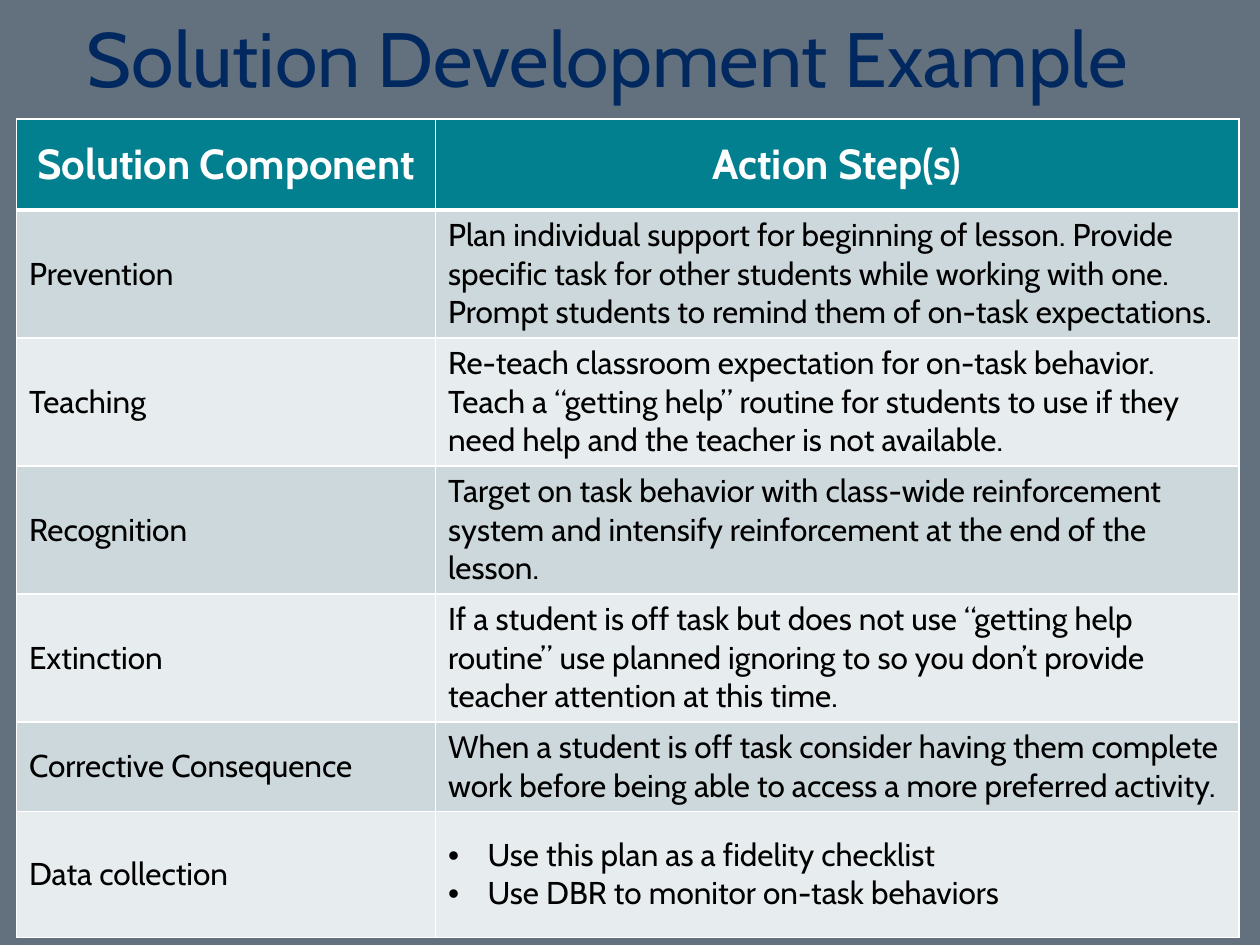
from lxml import etree
from pptx import Presentation
from pptx.dml.color import RGBColor
from pptx.enum.text import MSO_ANCHOR, MSO_AUTO_SIZE, PP_ALIGN
from pptx.oxml.ns import qn
from pptx.util import Pt

MIDDLE, TOP = MSO_ANCHOR.MIDDLE, MSO_ANCHOR.TOP
LEFT, CENTER = PP_ALIGN.LEFT, PP_ALIGN.CENTER
NO_AUTOFIT = MSO_AUTO_SIZE.NONE
FONT = "Cabin"
WHITE = "FFFFFF"
BANDS = ["CCD8DB", "E7EDEE"]
COLUMN_WIDTHS = [239.5, 459]
ROW_HEIGHTS = [52, 69, 69, 69, 69, 48, 72]
ROWS = [
    ("Solution Component", ["Action Step(s)"]),
    ("Prevention", [
        "Plan individual support for beginning of lesson. Provide specific task "
        "for other students while working with one.",
        "Prompt students to remind them of on-task expectations."]),
    ("Teaching", [
        "Re-teach classroom expectation for on-task behavior.",
        "Teach a “getting help” routine for students to use if they need help "
        "and the teacher is not available."]),
    ("Recognition", [
        "Target on task behavior with class-wide reinforcement system and "
        "intensify reinforcement at the end of the lesson."]),
    ("Extinction", [
        "If a student is off task but does not use “getting help routine” use "
        "planned ignoring to so you don’t provide teacher attention at this time."]),
    ("Corrective Consequence", [
        "When a student is off task consider having them complete work before "
        "being able to access a more preferred activity."]),
    ("Data collection", [
        "Use this plan as a fidelity checklist",
        "Use DBR to monitor on-task behaviors"]),
]


def color(value):
    return RGBColor.from_string(value)


def set_borders(cell, bottom_width):
    properties = cell._tc.get_or_add_tcPr()
    for index, side in enumerate(["lnL", "lnR", "lnT", "lnB"]):
        width = bottom_width if side == "lnB" else 1
        line = etree.Element(qn(f"a:{side}"), w=str(Pt(width)))
        fill = etree.SubElement(line, qn("a:solidFill"))
        etree.SubElement(fill, qn("a:srgbClr"), val=WHITE)
        properties.insert(index, line)


presentation = Presentation()
presentation.slide_width = Pt(720)
presentation.slide_height = Pt(540)
slide = presentation.slides.add_slide(presentation.slide_layouts[5])
slide.background.fill.solid()
slide.background.fill.fore_color.rgb = color("63717F")

title = slide.shapes.title
title.left, title.top, title.width, title.height = Pt(42.5), Pt(3), Pt(665), Pt(65)
title.text_frame.text = "Solution Development Example"
title.text_frame.auto_size = NO_AUTOFIT
title.text_frame.vertical_anchor = MIDDLE
paragraph = title.text_frame.paragraphs[0]
paragraph.alignment = LEFT
paragraph.line_spacing = 0.9
paragraph.font.name = FONT
paragraph.font.size = Pt(44)
paragraph.font.color.rgb = color("01295F")

table = slide.shapes.add_table(
    len(ROWS), len(COLUMN_WIDTHS), Pt(9.4), Pt(68),
    Pt(sum(COLUMN_WIDTHS)), Pt(sum(ROW_HEIGHTS))).table
for column, width in zip(table.columns, COLUMN_WIDTHS):
    column.width = Pt(width)
for row, height in zip(table.rows, ROW_HEIGHTS):
    row.height = Pt(height)

last_row = len(ROWS) - 1
for row_index, (component, steps) in enumerate(ROWS):
    header = row_index == 0
    for column_index, lines in enumerate([[component], steps]):
        cell = table.cell(row_index, column_index)
        cell.fill.solid()
        cell.fill.fore_color.rgb = color("028090" if header else BANDS[(row_index - 1) % 2])
        set_borders(cell, 3 if header else 1)
        centered = header or column_index == 0 or row_index == last_row
        cell.vertical_anchor = MIDDLE if centered else TOP
        cell.text_frame.text = "\n".join(lines)
        for paragraph in cell.text_frame.paragraphs:
            paragraph.alignment = CENTER if header else LEFT
            paragraph.font.name = FONT
            paragraph.font.size = Pt(24 if header else 18)
            paragraph.font.bold = header
            paragraph.font.color.rgb = color(WHITE if header else "000000")

for paragraph in table.cell(last_row, 1).text_frame.paragraphs:
    properties = paragraph._p.get_or_add_pPr()
    properties.set("marL", str(Pt(22.5)))
    properties.set("indent", str(Pt(-22.5)))
    bullet_font = etree.Element(qn("a:buFont"), typeface="Arial")
    bullet = etree.Element(qn("a:buChar"), char="•")
    properties.insert(0, bullet_font)
    properties.insert(1, bullet)

presentation.save("out.pptx")
